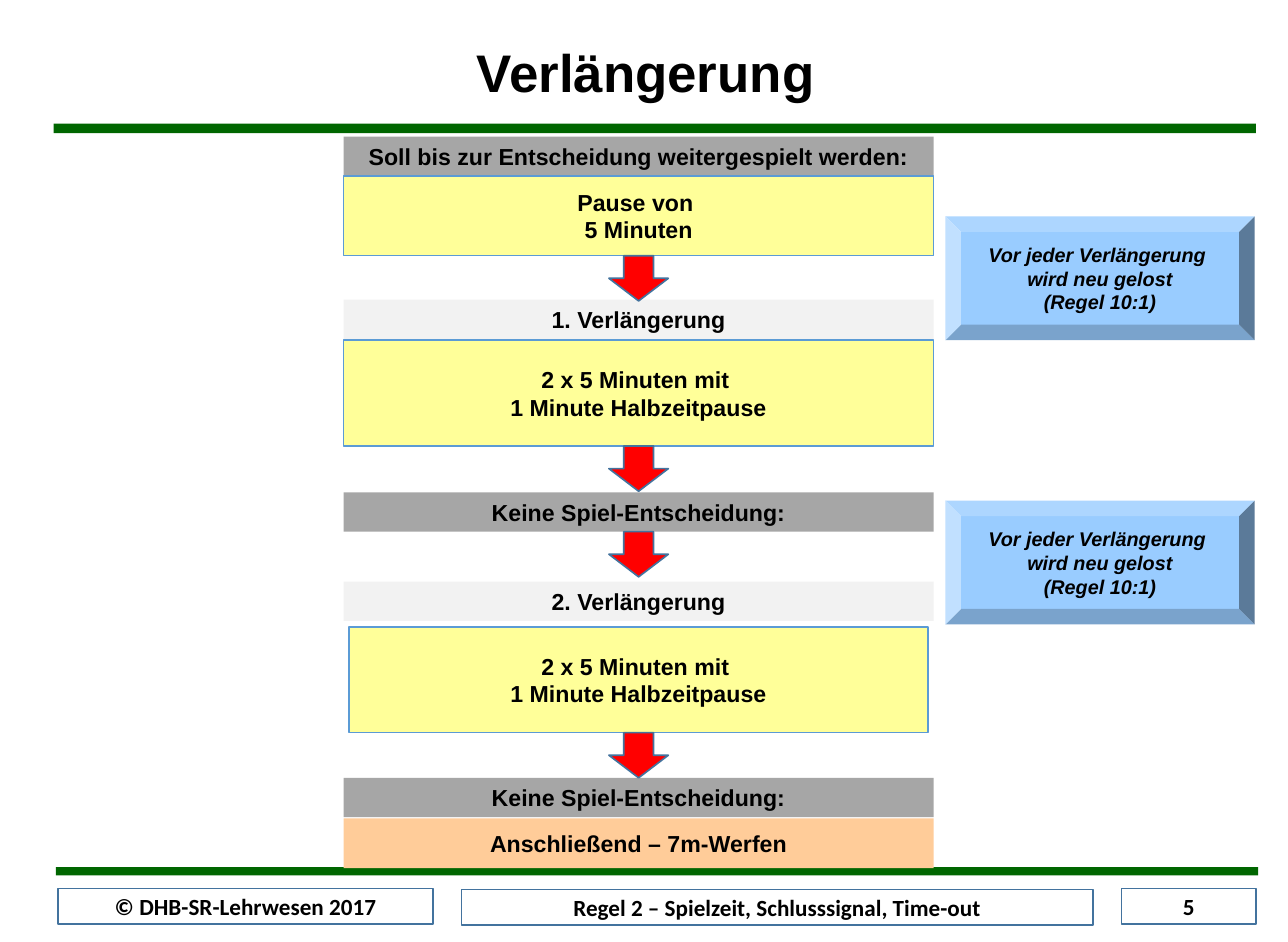
from pptx import Presentation
from pptx.dml.color import RGBColor
from pptx.enum.shapes import MSO_SHAPE
from pptx.enum.text import MSO_ANCHOR, PP_ALIGN
from pptx.util import Inches, Pt

RECT, BEVEL, DOWN = MSO_SHAPE.RECTANGLE, MSO_SHAPE.BEVEL, MSO_SHAPE.DOWN_ARROW
MIDDLE, CENTER = MSO_ANCHOR.MIDDLE, PP_ALIGN.CENTER
COLORS = {
    "green": "006600", "white": "FFFFFF", "black": "000000",
    "grey": "A6A6A6", "light": "F2F2F2", "yellow": "FFFF99",
    "peach": "FFCC99", "sky": "99CCFF", "red": "FF0000",
    "blue": "5B9BD5", "navy": "43739E",
}


def color(name):
    return RGBColor.from_string(COLORS[name])


def add_box(kind, left, top, width, height, fill, line=None, lines=(),
            size=14, font="Arial", italic=False, wrap=True):
    box = slide.shapes.add_shape(
        kind, Inches(left), Inches(top), Inches(width), Inches(height))
    box.shadow.inherit = False
    box.fill.solid()
    box.fill.fore_color.rgb = color(fill)
    if line:
        box.line.color.rgb = color(line)
        box.line.width = Pt(1)
    else:
        box.line.fill.background()
    frame = box.text_frame
    frame.word_wrap = wrap
    frame.vertical_anchor = MIDDLE
    for i, text in enumerate(lines):
        para = frame.add_paragraph() if i else frame.paragraphs[0]
        para.alignment = CENTER
        run = para.add_run()
        run.text = text
        run.font.name, run.font.size = font, Pt(size)
        run.font.bold, run.font.italic = True, italic
        run.font.color.rgb = color("black")
    return box


deck = Presentation()
deck.slide_width, deck.slide_height = Inches(10.83), Inches(7.92)
slide = deck.slides.add_slide(deck.slide_layouts[5])

# Title
title = slide.shapes.title
title.left, title.top = Inches(2.29), Inches(0.38)
title.width, title.height = Inches(6.28), Inches(0.51)
title.text_frame.vertical_anchor = MIDDLE
head = title.text_frame.paragraphs[0]
head.alignment, head.line_spacing = CENTER, 0.9
run = head.add_run()
run.text = "Verlängerung"
run.font.name, run.font.size, run.font.bold = "Arial", Pt(32), True
run.font.color.rgb = color("black")

# Green rules
add_box(RECT, 0.45, 1.04, 10.11, 0.08, "green")
add_box(RECT, 0.47, 7.29, 10.11, 0.07, "green")

# Footer
for left, top, width, text in [
    (0.49, 7.47, 3.15, "© DHB-SR-Lehrwesen 2017"),
    (3.88, 7.48, 5.31, "Regel 2 – Spielzeit, Schlusssignal, Time-out"),
    (9.43, 7.47, 1.13, "5"),
]:
    add_box(RECT, left, top, width, 0.3, "white", "navy", [text], font="Calibri")

# Flow of steps, all centred on one axis
AXIS, WIDE, BAR = 5.37, 4.96, 0.33
MATCH = ["2 x 5 Minuten mit ", "1 Minute Halbzeitpause"]
for top, width, height, fill, line, lines in [
    (1.15, WIDE, BAR, "grey", None,
     ["Soll bis zur Entscheidung weitergespielt werden:"]),
    (1.48, WIDE, 0.67, "yellow", "blue", ["Pause von ", "5 Minuten"]),
    (2.52, WIDE, BAR, "light", None, ["1. Verlängerung"]),
    (2.86, WIDE, 0.89, "yellow", "blue", MATCH),
    (4.14, WIDE, BAR, "grey", None, ["Keine Spiel-Entscheidung:"]),
    (4.89, WIDE, BAR, "light", None, ["2. Verlängerung"]),
    (5.27, 4.87, 0.89, "yellow", "blue", MATCH),
    (6.54, WIDE, BAR, "grey", None, ["Keine Spiel-Entscheidung:"]),
    (6.88, WIDE, 0.42, "peach", None, ["Anschließend – 7m-Werfen"]),
]:
    add_box(RECT, AXIS - width / 2, top, width, height, fill, line, lines)

# Arrows between steps
for top in (2.15, 3.75, 4.47, 6.16):
    add_box(DOWN, AXIS - 0.25, top, 0.5, 0.38, "red", "navy")

# Side notes
NOTE = ["Vor jeder Verlängerung ", "wird neu gelost", "(Regel 10:1)"]
for top in (1.82, 4.21):
    add_box(BEVEL, 7.95, top, 2.6, 1.04, "sky", None, NOTE,
            size=12, italic=True, wrap=False)

deck.save("out.pptx")
